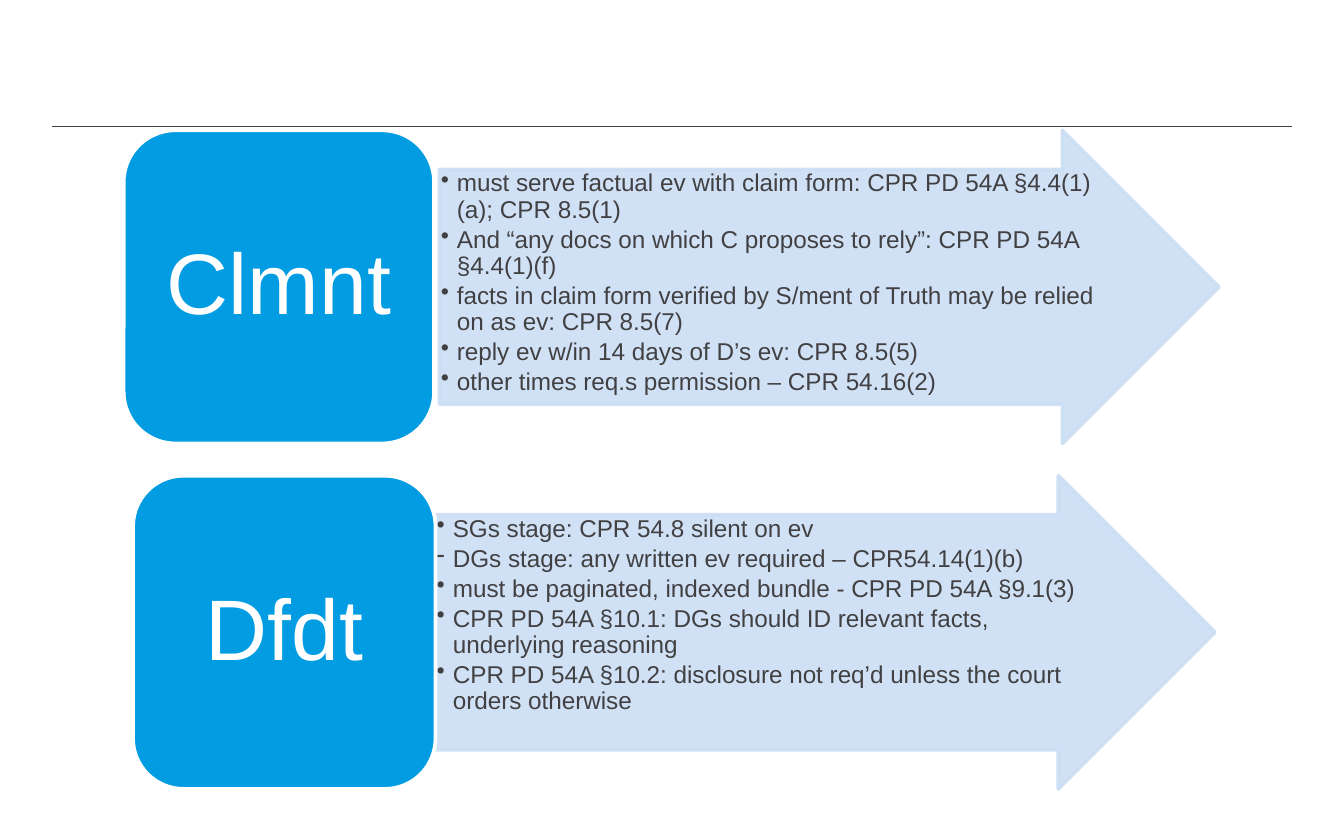
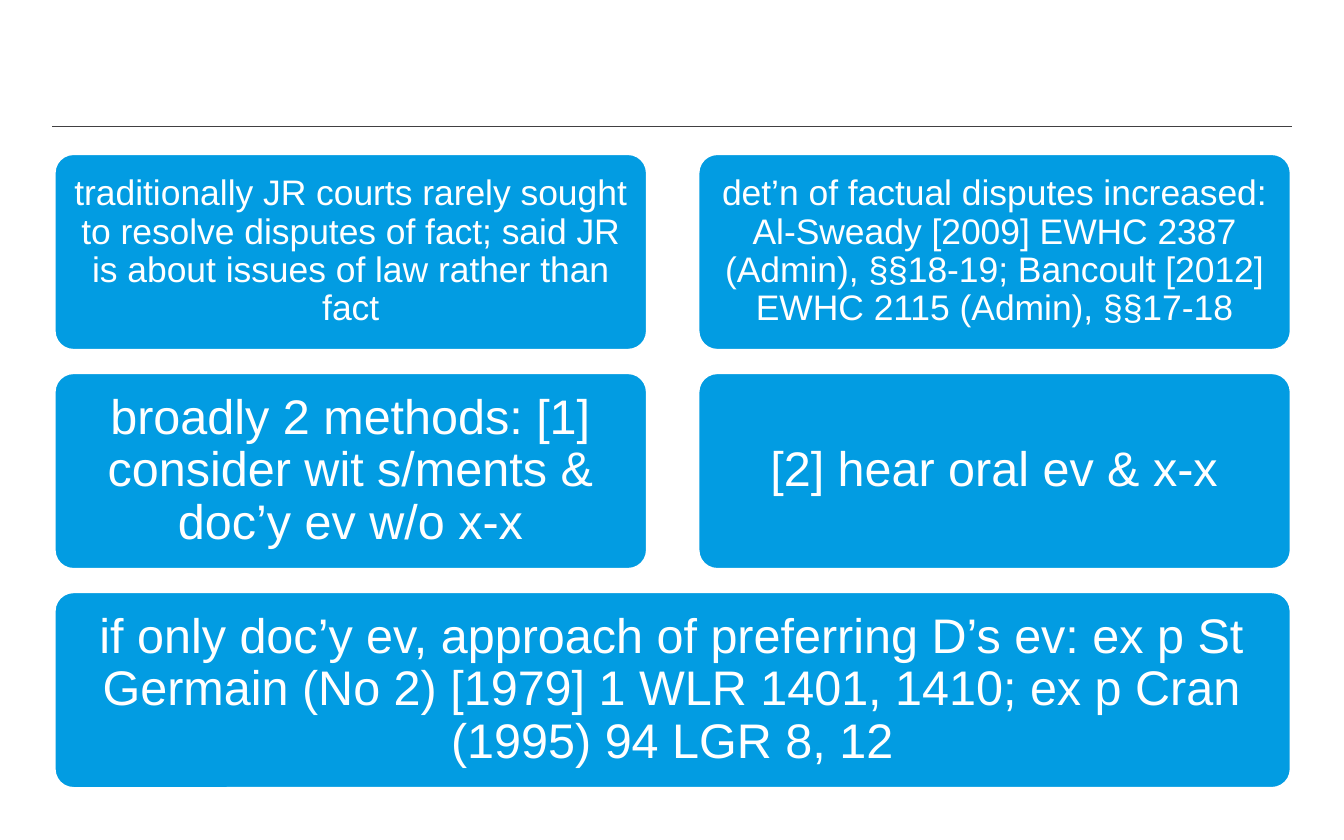
from dataclasses import dataclass
from typing import NamedTuple

from lxml.etree import SubElement as Sub
from pptx import Presentation as Deck
from pptx.dml.color import RGBColor as Rgb
from pptx.enum.shapes import MSO_CONNECTOR as Link, MSO_SHAPE as Kind
from pptx.enum.text import MSO_ANCHOR as Anchor, PP_ALIGN as Align
from pptx.oxml.ns import qn
from pptx.shapes.autoshape import Shape
from pptx.slide import Slide
from pptx.util import Inches as In, Pt


@dataclass(frozen=True)
class Theme:
    font: str = "Arial"
    blue: str = "029CE2"
    pale: str = "CCDEF4"
    ink: str = "414042"
    white: str = "FFFFFF"
    edge: float = 2
    rule: float = 0.75
    huge: int = 46
    large: int = 26
    mid: int = 19
    small: int = 13
    leading: float = 0.9


class Box(NamedTuple):
    x: float
    y: float
    w: float
    h: float


@dataclass(frozen=True)
class Grid:
    left: float
    top: float
    wide: float
    high: float
    gap_x: float
    gap_y: float

    def cell(self, col: int, row: int, span: int = 1) -> Box:
        return Box(self.left + col * (self.wide + self.gap_x),
                   self.top + row * (self.high + self.gap_y),
                   span * self.wide + (span - 1) * self.gap_x, self.high)


class Point(NamedTuple):
    text: str
    mark: str = "•"


class Party(NamedTuple):
    name: str
    left: float
    wide: float
    start: float
    points: list[Point]


class Card(NamedTuple):
    text: str
    col: int
    row: int
    span: int = 1
    size: int = Theme.large
    pad: float = 0.11


LOOK = Theme()
SIZE = Box(0, 0, 10, 6.25)
RULE = Box(0.39, 0.94, 9.22, 0)
LANES = Grid(0, 0.97, SIZE.w, 2.33, 0, 0.24)
CARDS = Grid(0.4, 1.14, 4.42, 1.47, 0.37, 0.16)
ARROW = 5.8
HANG = 0.12

PARTIES = [
    Party("Clmnt", 0.92, 2.31, 3.27, [
        Point("must serve factual ev with claim form: CPR PD 54A §4.4(1)(a); CPR 8.5(1)"),
        Point("And “any docs on which C proposes to rely”: CPR PD 54A §4.4(1)(f)"),
        Point("facts in claim form verified by S/ment of Truth may be relied on as ev: CPR 8.5(7)"),
        Point("reply ev w/in 14 days of D’s ev: CPR 8.5(5)"),
        Point("other times req.s permission – CPR 54.16(2)"),
    ]),
    Party("Dfdt", 0.99, 2.25, 3.24, [
        Point("SGs stage: CPR 54.8 silent on ev"),
        Point("DGs stage: any written ev required – CPR54.14(1)(b)", "-"),
        Point("must be paginated, indexed bundle - CPR PD 54A §9.1(3)"),
        Point("CPR PD 54A §10.1: DGs should ID relevant facts, underlying reasoning"),
        Point("CPR PD 54A §10.2: disclosure not req’d unless the court orders otherwise"),
    ]),
]

FACTS = [
    Card("if only doc’y ev, approach of preferring D’s ev: ex p St Germain (No 2) "
         "[1979] 1 WLR 1401, 1410; ex p Cran (1995) 94 LGR 8, 12", 0, 2, span=2),
    Card("broadly 2 methods: [1] consider wit s/ments & doc’y ev w/o x-x", 0, 1),
    Card("traditionally JR courts rarely sought to resolve disputes of fact; said JR "
         "is about issues of law rather than fact", 0, 0, size=LOOK.mid, pad=0.08),
    Card("[2] hear oral ev & x-x", 1, 1),
    Card("det’n of factual disputes increased: Al-Sweady [2009] EWHC 2387 (Admin), "
         "§§18-19; Bancoult [2012] EWHC 2115 (Admin), §§17-18",
         1, 0, size=LOOK.mid, pad=0.08),
]


def write(shape: Shape, points: list[Point], *, size: int, color: str,
          pads: tuple[float, float, float, float], anchor: Anchor = Anchor.MIDDLE,
          align: Align = Align.CENTER, after: float = 0) -> None:
    """Fill a shape with text; a point with a mark becomes a hanging bullet."""
    frame = shape.text_frame
    frame.word_wrap = True
    frame.vertical_anchor = anchor
    (frame.margin_left, frame.margin_top,
     frame.margin_right, frame.margin_bottom) = map(In, pads)
    for i, point in enumerate(points):
        para = frame.add_paragraph() if i else frame.paragraphs[0]
        para.alignment = align
        para.line_spacing = LOOK.leading
        para.space_after = Pt(after)
        if point.mark:
            para.level = 1
            props = para._p.get_or_add_pPr()
            props.set("marL", str(In(HANG)))
            props.set("indent", str(-In(HANG)))
            Sub(props, qn("a:buChar")).set("char", point.mark)
        run = para.add_run()
        run.text = point.text
        for font in (para.font, run.font):
            font.name = LOOK.font
            font.size = Pt(size)
            font.color.rgb = Rgb.from_string(color)


def draw(slide: Slide, kind: Kind, box: Box, fill: str, line: str,
         bends: tuple[float, ...] = (), alpha: int = 100) -> Shape:
    """Add a preset shape; alpha is the opacity in percent."""
    shape = slide.shapes.add_shape(kind, *map(In, box))
    shape.shadow.inherit = False
    for i, bend in enumerate(bends):
        shape.adjustments[i] = bend
    shape.fill.solid()
    shape.fill.fore_color.rgb = Rgb.from_string(fill)
    shape.line.color.rgb = Rgb.from_string(line)
    shape.line.width = Pt(LOOK.edge)
    if alpha < 100:
        for tint in shape.element.spPr.iter(qn("a:srgbClr")):
            Sub(tint, qn("a:alpha")).set("val", str(alpha * 1000))
    return shape


def start(deck: Deck) -> Slide:
    """Add a blank slide with the shared header rule."""
    slide = deck.slides.add_slide(deck.slide_layouts[6])
    rule = slide.shapes.add_connector(
        Link.STRAIGHT, In(RULE.x), In(RULE.y), In(RULE.x + RULE.w), In(RULE.y))
    rule.line.color.rgb = Rgb.from_string(LOOK.ink)
    rule.line.width = Pt(LOOK.rule)
    Sub(rule.element.spPr, qn("a:effectLst"))
    return slide


def add_party(slide: Slide, party: Party, row: int) -> None:
    lane = LANES.cell(0, row)
    arrow = draw(slide, Kind.RIGHT_ARROW, lane._replace(x=party.start, w=ARROW),
                 LOOK.pale, LOOK.pale, (0.75, 0.5), alpha=90)
    write(arrow, party.points, size=LOOK.small, color=LOOK.ink,
          pads=(0.01,) * 4, anchor=Anchor.TOP, align=Align.LEFT, after=2)
    tile = draw(slide, Kind.ROUNDED_RECTANGLE,
                lane._replace(x=party.left, w=party.wide), LOOK.blue, LOOK.white)
    write(tile, [Point(party.name, "")], size=LOOK.huge, color=LOOK.white,
          pads=(0.19, 0.1, 0.19, 0.1))


def add_card(slide: Slide, card: Card) -> None:
    tile = draw(slide, Kind.ROUNDED_RECTANGLE,
                CARDS.cell(card.col, card.row, card.span),
                LOOK.blue, LOOK.white, (0.1,))
    write(tile, [Point(card.text, "")], size=card.size, color=LOOK.white,
          pads=(card.pad,) * 4)


def main() -> None:
    deck = Deck()
    deck.slide_width, deck.slide_height = In(SIZE.w), In(SIZE.h)
    slide = start(deck)
    for row, party in enumerate(PARTIES):
        add_party(slide, party, row)
    slide = start(deck)
    for card in FACTS:
        add_card(slide, card)
    deck.save("out.pptx")


if __name__ == "__main__":
    main()
